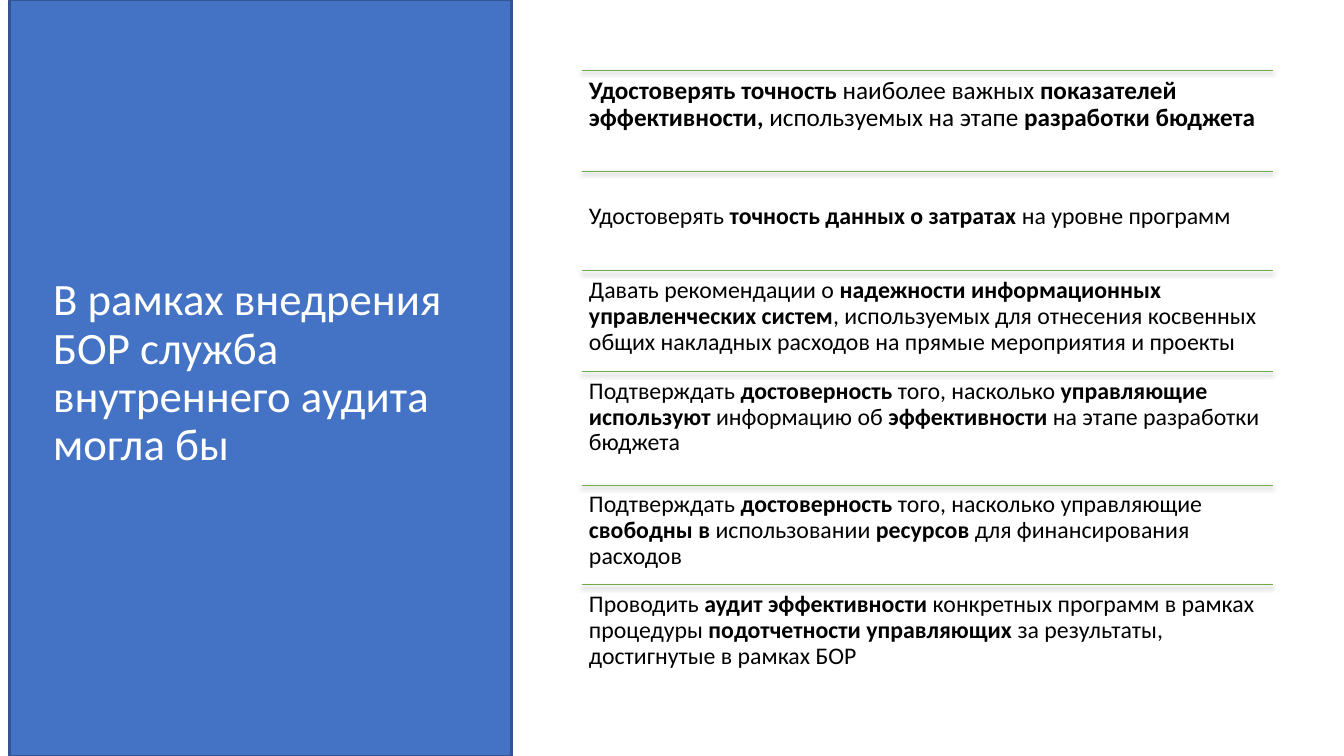
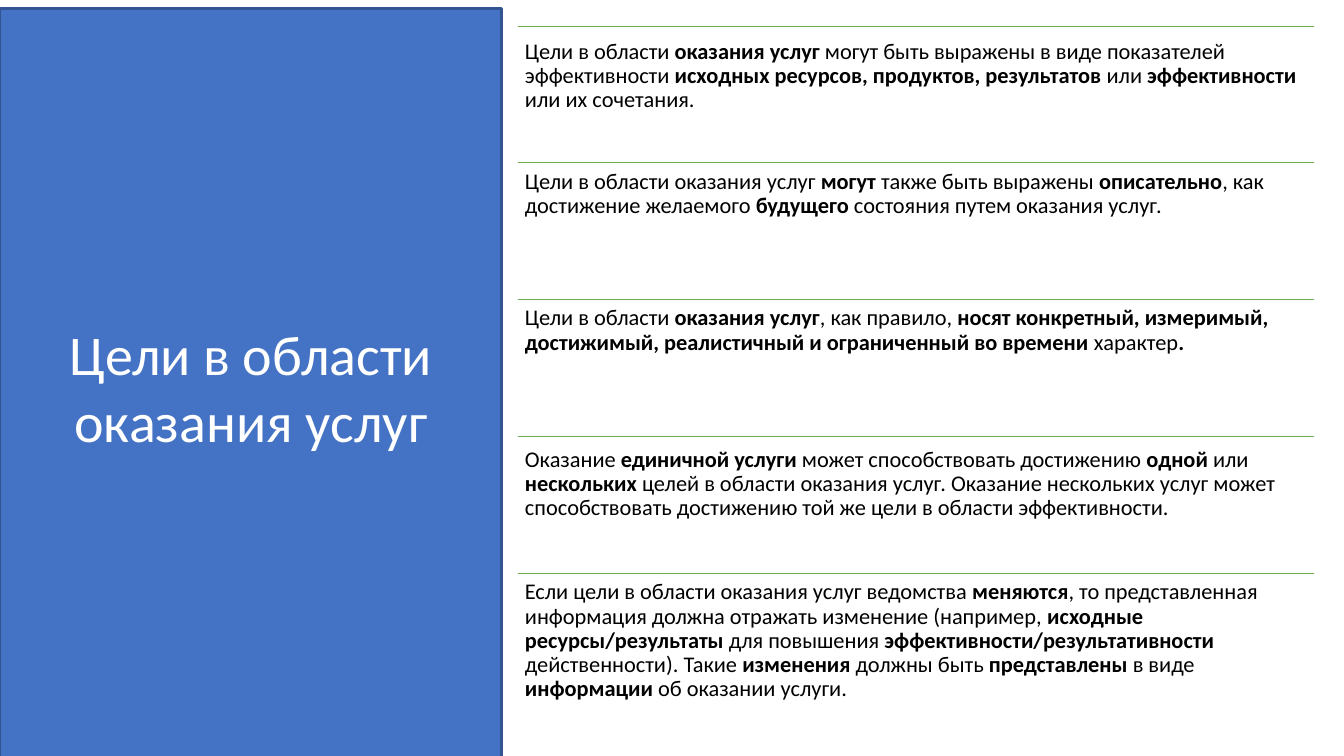
from dataclasses import dataclass

from lxml import etree
from pptx import Presentation
from pptx import util as u
from pptx.dml.color import RGBColor
from pptx.enum import shapes, text
from pptx.oxml import ns


@dataclass(frozen=True)
class Theme:
    font: str = "Calibri"
    panel: str = "4472C4"
    panel_edge: str = "325491"
    rule: str = "70AD47"
    title: str = "FFFFFF"
    body: str = "000000"
    shadow: str = "000000"
    title_size: int = 32
    big_title_size: int = 40
    lead_size: int = 18
    body_size: int = 17
    small_size: int = 16
    panel_edge_width: float = 2
    rule_width: float = 0.75
    tight: float = 0.9


T = Theme()
TITLE_ONLY = 5

AUDIT_ROLES = [
    dict(height=96, size=T.lead_size, copy="*Удостоверять точность *наиболее важных* показателей "
         "эффективности, *используемых на этапе *разработки бюджета*"),
    dict(height=95, drop=24, copy="Удостоверять *точность данных о затратах *на уровне программ"),
    dict(height=96, copy="Давать рекомендации о *надежности информационных управленческих систем*, "
         "используемых для отнесения косвенных общих накладных расходов на прямые "
         "мероприятия и проекты"),
    dict(height=108, copy="Подтверждать *достоверность *того, насколько *управляющие используют *"
         "информацию об *эффективности *на этапе разработки бюджета"),
    dict(height=95, copy="Подтверждать *достоверность *того, насколько управляющие *свободны в* "
         "использовании *ресурсов *для финансирования расходов"),
    dict(height=96, copy="Проводить *аудит эффективности* конкретных программ в рамках процедуры "
         "*подотчетности управляющих* за результаты, достигнутые в рамках БОР"),
]

SERVICE_GOALS = [
    dict(height=130, drop=6, copy="Цели в области *оказания услуг* могут быть выражены в виде "
         "показателей эффективности *исходных ресурсов, продуктов, результатов *или "
         "*эффективности *или их сочетания."),
    dict(height=130, copy="Цели в области оказания услуг *могут *также быть выражены *описательно*, "
         "как достижение желаемого *будущего *состояния путем оказания услуг."),
    dict(height=131, copy="Цели в области *оказания услуг*, как правило, *носят конкретный, "
         "измеримый, достижимый, реалистичный и ограниченный во времени* характер*.*"),
    dict(height=130, drop=4, copy="Оказание *единичной услуги* может способствовать достижению "
         "*одной *или *нескольких *целей в области оказания услуг. Оказание нескольких услуг "
         "может способствовать достижению той же цели в области эффективности."),
    dict(height=130, copy="Если цели в области оказания услуг ведомства *меняются*, то "
         "представленная информация должна отражать изменение (например, *исходные "
         "ресурсы/результаты* для повышения *эффективности/результативности *действенности). "
         "Такие *изменения *должны быть *представлены *в виде *информации *об оказании услуги."),
]


def px(n):
    return u.Emu(n * 9525)


def box(*lengths):
    return [px(n) for n in lengths]


def rgb(color):
    return RGBColor.from_string(color)


def write(tf, copy, size, color=T.body, align=text.PP_ALIGN.LEFT,
          anchor=text.MSO_ANCHOR.TOP, spacing=T.tight, inset=None):
    tf.word_wrap = True
    tf.auto_size = text.MSO_AUTO_SIZE.NONE
    tf.vertical_anchor = anchor
    if inset is not None:
        tf.margin_left = tf.margin_top = tf.margin_right = tf.margin_bottom = px(inset)
    p = tf.paragraphs[0]
    p.alignment = align
    p.line_spacing = spacing
    for i, part in enumerate(copy.split("*")):
        if part:
            r = p.add_run()
            r.text = part
            r.font.name = T.font
            r.font.size = u.Pt(size)
            r.font.bold = i % 2 == 1
            r.font.color.rgb = rgb(color)


def add_panel_title(s, copy, panel, frame, **style):
    sp = s.shapes.add_shape(shapes.MSO_SHAPE.RECTANGLE, *box(*panel))
    sp.shadow.inherit = False
    sp.fill.solid()
    sp.fill.fore_color.rgb = rgb(T.panel)
    sp.line.color.rgb = rgb(T.panel_edge)
    sp.line.width = u.Pt(T.panel_edge_width)
    title = s.shapes.title
    title.element.addprevious(sp.element)
    title.left, title.top, title.width, title.height = box(*frame)
    write(title.text_frame, copy, color=T.title, anchor=text.MSO_ANCHOR.MIDDLE, **style)


def add_rule(s, left, top, width, shadow):
    line = s.shapes.add_connector(shapes.MSO_CONNECTOR.STRAIGHT,
                                  *box(left, top, left + width, top))
    line.line.color.rgb = rgb(T.rule)
    line.line.width = u.Pt(T.rule_width)
    effects = etree.SubElement(line.element.spPr, ns.qn("a:effectLst"))
    if shadow:
        outer = etree.SubElement(effects, ns.qn("a:outerShdw"), blurRad="40000",
                                 dist="23000", dir="5400000", rotWithShape="0")
        color = etree.SubElement(outer, ns.qn("a:srgbClr"), val=T.shadow)
        etree.SubElement(color, ns.qn("a:alpha"), val="35000")


def add_ruled_rows(s, rows, left, top, width, size, shadow):
    for row in rows:
        add_rule(s, left, top, width, shadow)
        drop = row.get("drop", 0)
        sp = s.shapes.add_textbox(*box(left, top + drop, width, row["height"] - drop))
        write(sp.text_frame, row["copy"], row.get("size", size), inset=7)
        top += row["height"]


def main():
    prs = Presentation()
    prs.slide_width, prs.slide_height = box(1280, 720)
    layout = prs.slide_layouts[TITLE_ONLY]

    s = prs.slides.add_slide(layout)
    add_panel_title(s, "В рамках внедрения БОР служба внутреннего аудита могла бы",
                    panel=(9, 0, 478, 720), frame=(41, 67, 412, 578), size=T.title_size)
    add_ruled_rows(s, AUDIT_ROLES, left=554, top=67, width=658, size=T.body_size, shadow=True)

    s = prs.slides.add_slide(layout)
    add_panel_title(s, "Цели в области оказания услуг",
                    panel=(0, 8, 478, 720), frame=(0, 8, 478, 720),
                    size=T.big_title_size, align=text.PP_ALIGN.CENTER, spacing=1.0)
    add_ruled_rows(s, SERVICE_GOALS, left=493, top=25, width=758, size=T.small_size, shadow=False)

    prs.save("out.pptx")


if __name__ == "__main__":
    main()
